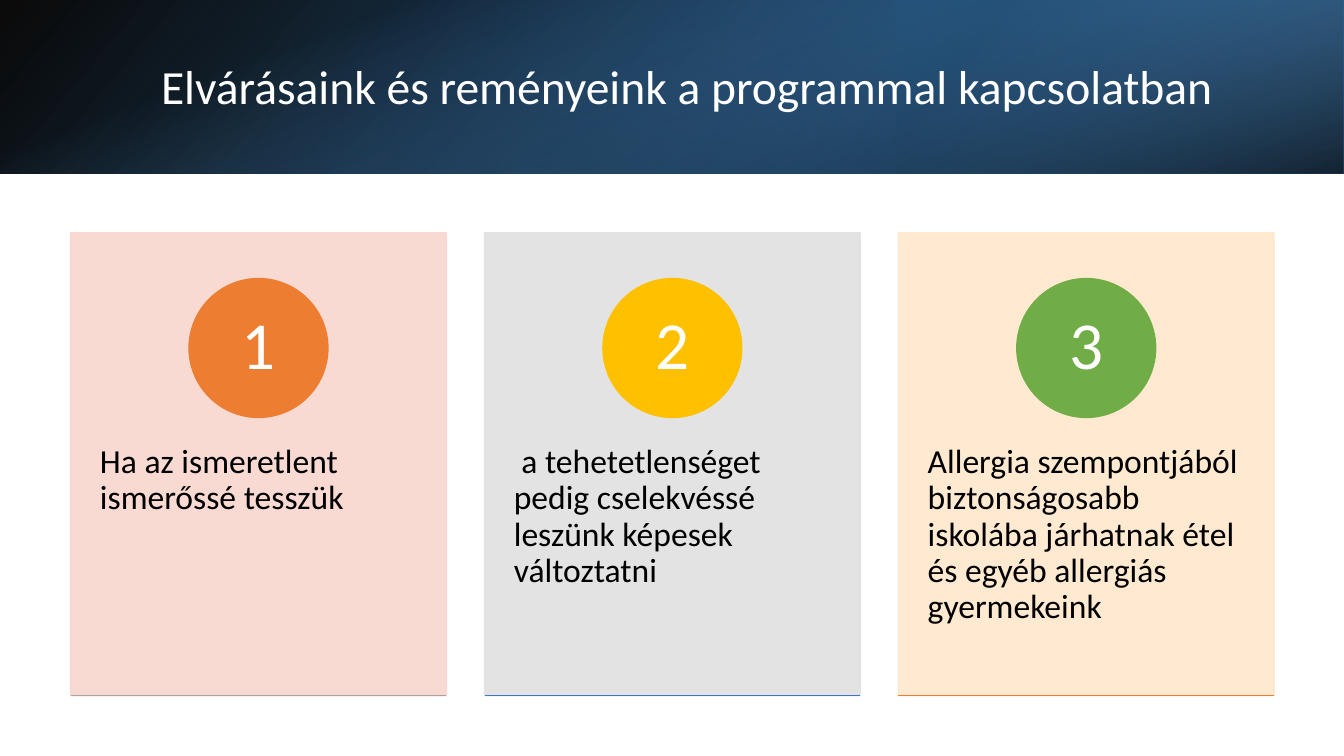
from dataclasses import dataclass

from lxml import etree
from pptx import Presentation
from pptx.dml.color import RGBColor
from pptx.enum.shapes import MSO_CONNECTOR, MSO_SHAPE
from pptx.enum.text import MSO_ANCHOR, PP_ALIGN
from pptx.oxml.ns import qn
from pptx.util import Cm, Pt

RECT, OVAL = MSO_SHAPE.RECTANGLE, MSO_SHAPE.OVAL
STRAIGHT = MSO_CONNECTOR.STRAIGHT
TOP, MIDDLE = MSO_ANCHOR.TOP, MSO_ANCHOR.MIDDLE
LEFT, CENTER = PP_ALIGN.LEFT, PP_ALIGN.CENTER


@dataclass(frozen=True)
class Theme:
    font: str = "Calibri"
    title_size: int = 34
    number_size: int = 48
    body_size: int = 24
    white: str = "FFFFFF"
    black: str = "000000"
    navy: str = "1F4E79"
    blue: str = "2E75B6"
    sky: str = "5B9BD5"
    cards: tuple = ("F8D7CE", "E1E1E1", "FFE8CC")
    circles: tuple = ("ED7D31", "FFC000", "70AD47")
    rules: tuple = ("A5A5A5", "4472C4", "ED7D31")


THEME = Theme()
SLIDE_W, SLIDE_H, HEADER_H = 33.87, 19.05, 4.37
CARD_X, CARD_Y, CARD_W, CARD_H, CARD_STEP = 1.78, 5.87, 9.47, 11.66, 10.43
CIRCLE_Y, CIRCLE_D = 7.02, 3.5
TITLE = "Elvárásaink és reményeink a programmal kapcsolatban"
CARD_TEXTS = (
    "Ha az ismeretlent ismerőssé tesszük",
    " a tehetetlenséget pedig cselekvéssé leszünk képesek változtatni",
    "Allergia szempontjából biztonságosabb iskolába járhatnak étel és egyéb allergiás gyermekeink",
)


def rgb(value):
    return RGBColor.from_string(value)


def set_alpha(sp, alphas):
    for color, alpha in zip(sp._element.spPr.iter(qn("a:srgbClr")), alphas):
        etree.SubElement(color, qn("a:alpha"), val=str(alpha * 1000))


def add_text(sp, text, size, color, anchor=MIDDLE, align=LEFT, insets=(0.25, 0.13)):
    side, top = (Cm(v) for v in insets)
    tf = sp.text_frame
    frame = dict(word_wrap=True, vertical_anchor=anchor, margin_left=side,
                 margin_right=side, margin_top=top, margin_bottom=Cm(0.03))
    for name, value in frame.items():
        setattr(tf, name, value)
    p = tf.paragraphs[0]
    p.alignment = align
    p.line_spacing = 0.9
    r = p.add_run()
    r.text = text
    for name, value in dict(name=THEME.font, size=Pt(size)).items():
        setattr(r.font, name, value)
    r.font.color.rgb = rgb(color)


def add_shape(s, kind, box, color):
    sp = s.shapes.add_shape(kind, *(Cm(v) for v in box))
    sp.shadow.inherit = False
    sp.fill.solid()
    sp.fill.fore_color.rgb = rgb(color)
    sp.line.color.rgb = rgb(color)
    sp.line.width = Pt(1)
    return sp


def add_gradient(s, box, stops, angle, rotation=0, flip=False):
    sp = s.shapes.add_shape(RECT, *(Cm(v) for v in box))
    sp.shadow.inherit = False
    sp.line.fill.background()
    sp.rotation = rotation
    if flip:
        sp._element.spPr.xfrm.set("flipH", "1")
    sp.fill.gradient()
    sp.fill.gradient_angle = 360 - angle
    for stop, (position, color, _) in zip(sp.fill.gradient_stops, stops):
        stop.position = position
        stop.color.rgb = rgb(color)
    set_alpha(sp, [alpha for _, _, alpha in stops])


def add_rule(s, x, y, width, color):
    line = s.shapes.add_connector(STRAIGHT, Cm(x), Cm(y), Cm(x + width), Cm(y))
    line.line.color.rgb = rgb(color)
    line.line.width = Pt(1)
    etree.SubElement(line._element.spPr, qn("a:effectLst"))


def add_header(s):
    third = SLIDE_W / 3
    shift = (SLIDE_W - HEADER_H) / 2
    add_gradient(s, (0, 0, SLIDE_W, HEADER_H),
                 [(0, THEME.black, 96), (1, THEME.blue, 100)], 140, flip=True)
    add_gradient(s, (2 * third, 0, third, HEADER_H),
                 [(0.19, THEME.navy, 68), (1, THEME.sky, 79)], 320, 180, True)
    add_gradient(s, (shift, -shift, HEADER_H, SLIDE_W),
                 [(0.23, THEME.sky, 0), (0.99, THEME.black, 74)], 340, 90)
    title = s.shapes.add_textbox(Cm(3.81), Cm(0.97), Cm(27.89), Cm(2.44))
    add_text(title, TITLE, THEME.title_size, THEME.white)


def add_card(s, index, text):
    x = CARD_X + index * CARD_STEP
    card = add_shape(s, RECT, (x, CARD_Y, CARD_W, CARD_H), THEME.cards[index])
    set_alpha(card, (90, 90))
    add_text(card, text, THEME.body_size, THEME.black, TOP, insets=(0.74, 5.33))
    circle_x = x + (CARD_W - CIRCLE_D) / 2
    circle = add_shape(s, OVAL, (circle_x, CIRCLE_Y, CIRCLE_D, CIRCLE_D), THEME.circles[index])
    add_text(circle, str(index + 1), THEME.number_size, THEME.white,
             align=CENTER, insets=(0.28, 0.03))
    add_rule(s, x, CARD_Y + CARD_H, CARD_W, THEME.rules[index])


def main():
    prs = Presentation()
    prs.slide_width, prs.slide_height = Cm(SLIDE_W), Cm(SLIDE_H)
    s = prs.slides.add_slide(prs.slide_layouts[6])
    add_header(s)
    for index, text in enumerate(CARD_TEXTS):
        add_card(s, index, text)
    prs.save("out.pptx")


if __name__ == "__main__":
    main()
